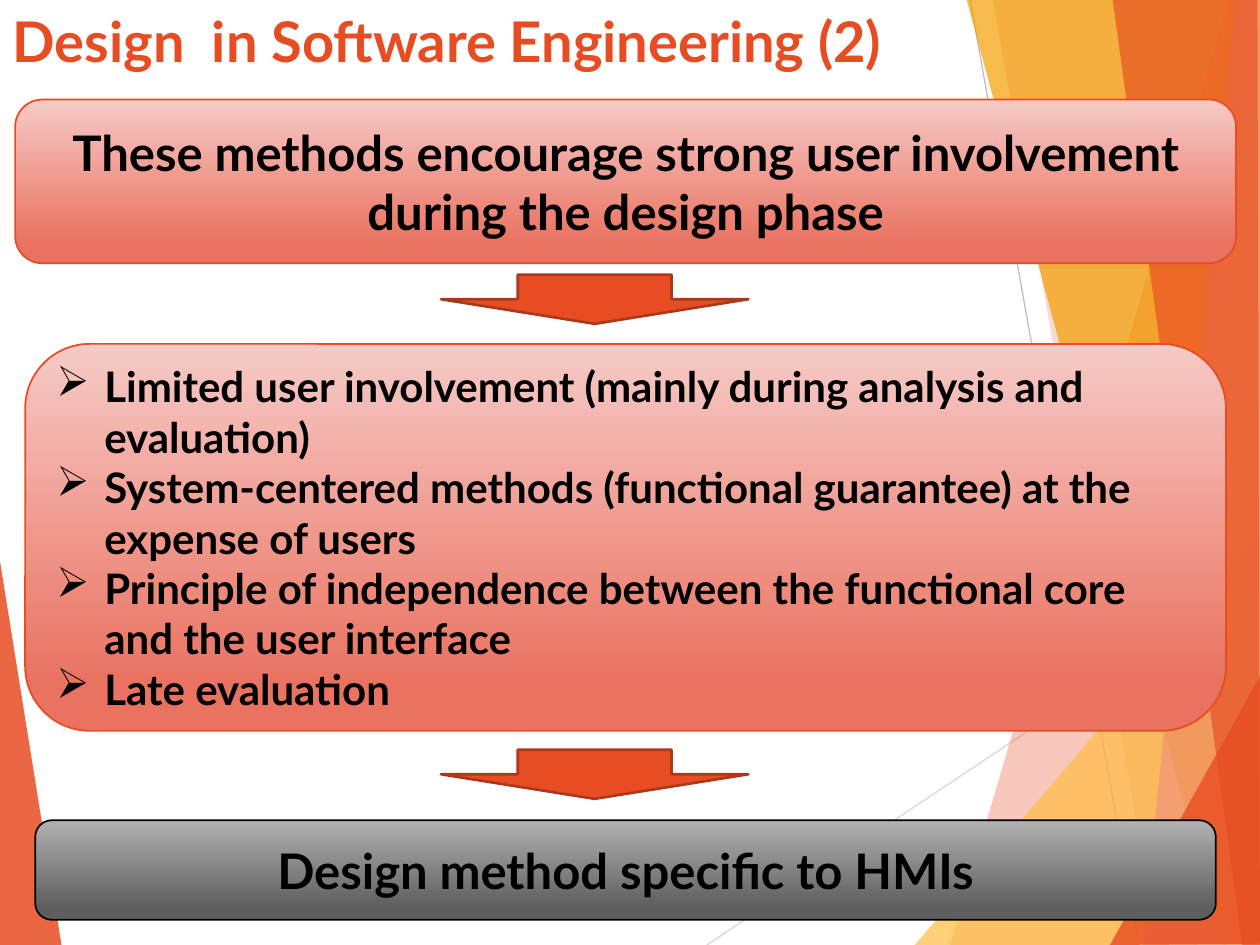
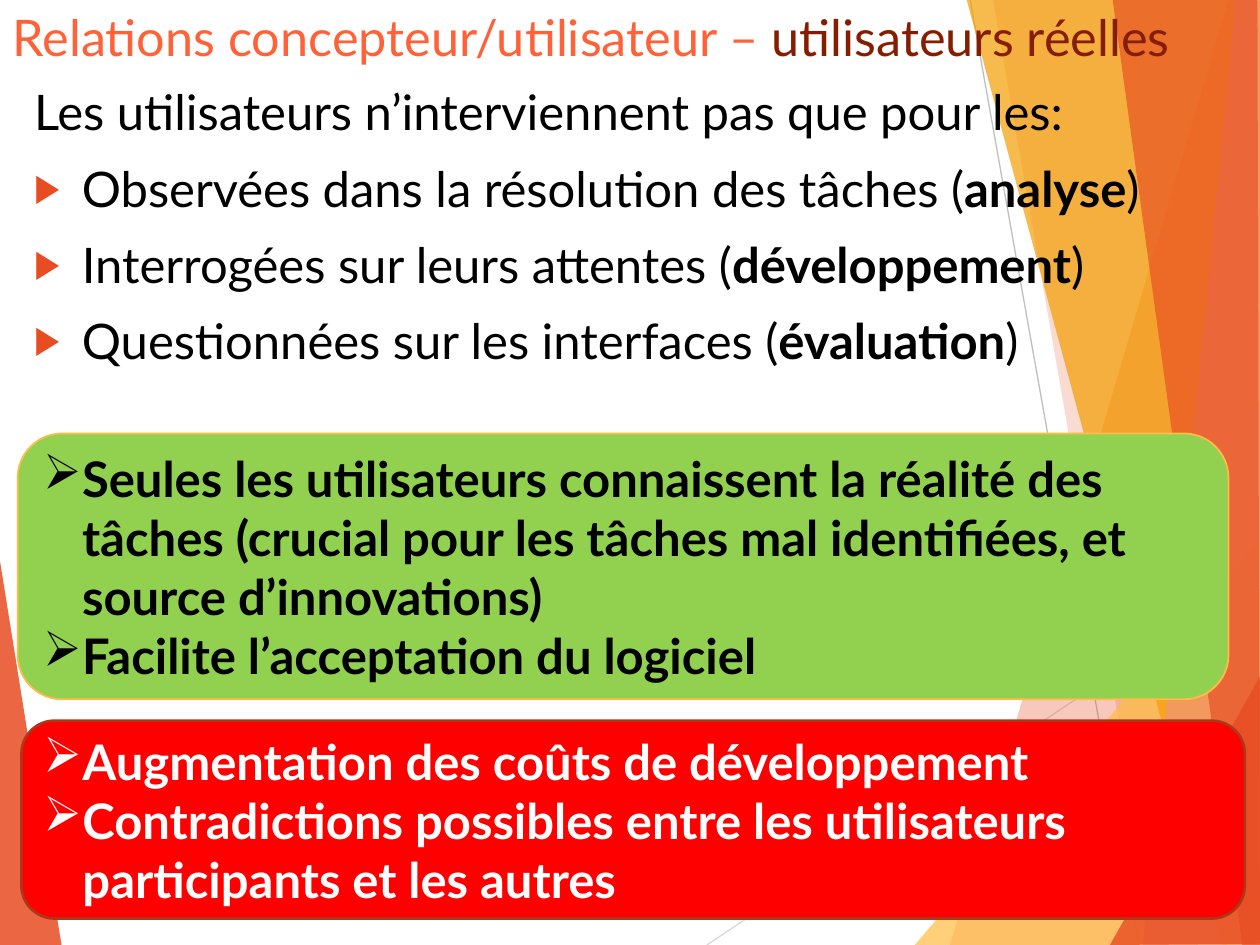
"""Builds two slides on user involvement in software design."""
from lxml.etree import SubElement
from pptx import Presentation
from pptx.dml.color import RGBColor
from pptx.enum.shapes import MSO_CONNECTOR as LINK, MSO_SHAPE as KIND
from pptx.enum.text import MSO_ANCHOR as ANCHOR, MSO_AUTO_SIZE as FIT, PP_ALIGN as ALIGN
from pptx.oxml.ns import qn
from pptx.util import Inches, Pt

FONT = "Lato"
BLACK = RGBColor(0x00, 0x00, 0x00)
WHITE = RGBColor(0xFF, 0xFF, 0xFF)
ORANGE = RGBColor(0xE8, 0x4C, 0x22)
RUST = RGBColor(0xAC, 0x38, 0x19)
CORAL = RGBColor(0xFF, 0x62, 0x38)
BROWN = RGBColor(0x85, 0x1D, 0x00)
GOLD = RGBColor(0xFF, 0xBD, 0x47)
AMBER = RGBColor(0xF4, 0x9D, 0x00)
SALMON = RGBColor(0xF1, 0x94, 0x7A)
GREEN = RGBColor(0x92, 0xD0, 0x50)
RED = RGBColor(0xFF, 0x00, 0x00)
SILVER = RGBColor(0xD9, 0xD9, 0xD9)
GREY = RGBColor(0xBF, 0xBF, 0xBF)
WARM = (RGBColor(0xF6, 0xCA, 0xC6), RGBColor(0xEA, 0x72, 0x61))
COOL = (RGBColor(0xB2, 0xB2, 0xB2), RGBColor(0x5E, 0x5E, 0x5E))


def write(frame, *lines, size=28, color=BLACK, bold=False, accent=None, align=ALIGN.LEFT,
          anchor=ANCHOR.MIDDLE, bullet=None, indent=0, plain=0, gap=0, tint=None):
    """Writes lines; parts between bars are bold, or take the accent colour."""
    frame.word_wrap = True
    frame.auto_size = FIT.NONE
    frame.vertical_anchor = anchor
    for i, line in enumerate(lines):
        para = frame.paragraphs[0] if i == 0 else frame.add_paragraph()
        para.alignment = align
        para.space_before = Pt(gap if i else 0)
        props = para._p.get_or_add_pPr()
        listed = bullet and i >= plain
        inset = Inches(indent if listed else 0)
        props.set("marL", str(inset))
        props.set("indent", str(-inset))
        if listed and tint:
            SubElement(SubElement(props, qn("a:buClr")), qn("a:srgbClr"), val=str(tint))
            SubElement(props, qn("a:buSzPct"), val="80000")
        if listed:
            SubElement(props, qn("a:buChar"), char=bullet)
        else:
            SubElement(props, qn("a:buNone"))
        for j, part in enumerate(line.split("|")):
            run = para.add_run()
            run.text = part
            font = run.font
            font.name, font.size = FONT, Pt(size)
            font.bold = bold or (j % 2 == 1 and not accent)
            font.color.rgb = accent if accent and j % 2 else color


def draw(slide, kind, place, fill, edge, width=1):
    """Draws a preset shape with a flat fill or a pair of gradient colours."""
    shape = slide.shapes.add_shape(kind, *map(Inches, place))
    shape.shadow.inherit = False
    if isinstance(fill, RGBColor):
        shape.fill.solid()
        shape.fill.fore_color.rgb = fill
    else:
        shape.fill.gradient()
        shape.fill.gradient_angle = 270
        for stop, color, spot in zip(shape.fill.gradient_stops, fill, (0, 0.88)):
            stop.color.rgb, stop.position = color, spot
    shape.line.color.rgb, shape.line.width = edge, Pt(width)
    return shape.text_frame


deck = Presentation()
deck.slide_width, deck.slide_height = Inches(10), Inches(7.5)
first = deck.slides.add_slide(deck.slide_layouts[5])
second = deck.slides.add_slide(deck.slide_layouts[1])

decor = []
for start, end, color in [((5.61, 7.5), (10.01, 4.57), SILVER), ((7.7, 0), (9.04, 7.5), GREY)]:
    link = first.shapes.add_connector(LINK.STRAIGHT, *map(Inches, start + end))
    link.line.color.rgb, link.line.width = color, Pt(0.75)
    SubElement(link.element.spPr, qn("a:effectLst"))
    decor.append(link)

for color, alpha, points in [
    (ORANGE, 85, [(-0.01, 4.39), (0.49, 7.51), (-0.01, 7.5)]),
    (ORANGE, 30, [(9.75, 0), (7.54, 7.5), (10.02, 7.51), (10.01, 0.01)]),
    (ORANGE, 20, [(7.88, -0.01), (9.19, 7.5), (10.01, 7.5), (10.01, -0.01)]),
    (GOLD, 72, [(7.26, 7.5), (10, 4.29), (10.01, 7.5)]),
    (AMBER, 70, [(7.67, -0.01), (9.7, 7.5), (10.01, 7.49), (10.01, -0.01)]),
    (SALMON, 70, [(9.81, -0.01), (9.07, 7.5), (10.01, 7.5), (10, -0.01)]),
    (ORANGE, 65, [(8.83, -0.01), (9.86, 7.5), (10, 7.5), (9.98, -0.01)]),
    (ORANGE, 80, [(8.81, 7.5), (10.01, 5.35), (10.01, 7.49)]),
]:
    spots = [(Inches(x), Inches(y)) for x, y in points]
    pen = first.shapes.build_freeform(*spots[0])
    pen.add_line_segments(spots[1:], close=True)
    facet = pen.convert_to_shape()
    facet.shadow.inherit = False
    facet.line.fill.background()
    facet.fill.solid()
    facet.fill.fore_color.rgb = color
    tone = facet.element.spPr.find(qn("a:solidFill")).find(qn("a:srgbClr"))
    SubElement(tone, qn("a:alpha"), val=str(alpha * 1000))
    decor.append(facet)

tree = deck.slide_master.shapes.element
for i, item in enumerate(decor):
    tree.insert(2 + i, item.element)

for slide, text, look in [
    (first, "Design  in Software Engineering (2)", dict(size=32, color=ORANGE, bold=True)),
    (second, "Relations concepteur/utilisateur – |utilisateurs réelles",
     dict(size=28.8, color=CORAL, accent=BROWN)),
]:
    title = slide.shapes.title
    title.left, title.top, title.width, title.height = map(Inches, (0, 0, 10, 0.95))
    write(title.text_frame, text, anchor=ANCHOR.TOP, **look)

box = draw(first, KIND.ROUNDED_RECTANGLE, (0.12, 0.79, 9.69, 1.3), WARM, ORANGE)
write(box, "These methods encourage strong user involvement during the design phase",
      bold=True, align=ALIGN.CENTER)
box = draw(first, KIND.ROUNDED_RECTANGLE, (0.2, 2.73, 9.53, 3.07), WARM, ORANGE)
write(box, "Limited user involvement (mainly during analysis and evaluation)",
      "System-centered methods (functional guarantee) at the expense of users",
      "Principle of independence between the functional core and the user interface",
      "Late evaluation", size=24, bold=True, bullet="➢", indent=0.38)
box = draw(first, KIND.ROUNDED_RECTANGLE, (0.28, 6.51, 9.37, 0.79), COOL, BLACK)
write(box, "Design method specific to HMIs", bold=True, align=ALIGN.CENTER)
for top in (2.18, 5.95):
    draw(first, KIND.DOWN_ARROW, (3.5, top, 2.44, 0.39), ORANGE, RUST, 1.5)

body = second.placeholders[1]
body.left, body.top, body.width, body.height = map(Inches, (0.17, 0.6, 9.41, 2.73))
write(body.text_frame, "Les utilisateurs n’interviennent pas que pour les:",
      "Observées dans la résolution des tâches (|analyse|)",
      "Interrogées sur leurs attentes (|développement|)",
      "Questionnées sur les interfaces (|évaluation|)",
      anchor=ANCHOR.TOP, bullet="▶", indent=0.38, plain=1, gap=10, tint=ORANGE)
box = draw(second, KIND.ROUNDED_RECTANGLE, (0.14, 3.44, 9.61, 2.11), GREEN, GOLD)
write(box, "Seules les utilisateurs connaissent la réalité des tâches "
      "(crucial pour les tâches mal identifiées, et source d’innovations)",
      "Facilite l’acceptation du logiciel", bold=True, bullet="➢", indent=0.31)
box = draw(second, KIND.ROUNDED_RECTANGLE, (0.17, 5.72, 9.71, 1.57), RED, RUST, 1.5)
write(box, "Augmentation des coûts de développement",
      "Contradictions possibles entre les utilisateurs participants et les autres",
      color=WHITE, bold=True, bullet="➢", indent=0.31)

deck.save("out.pptx")
